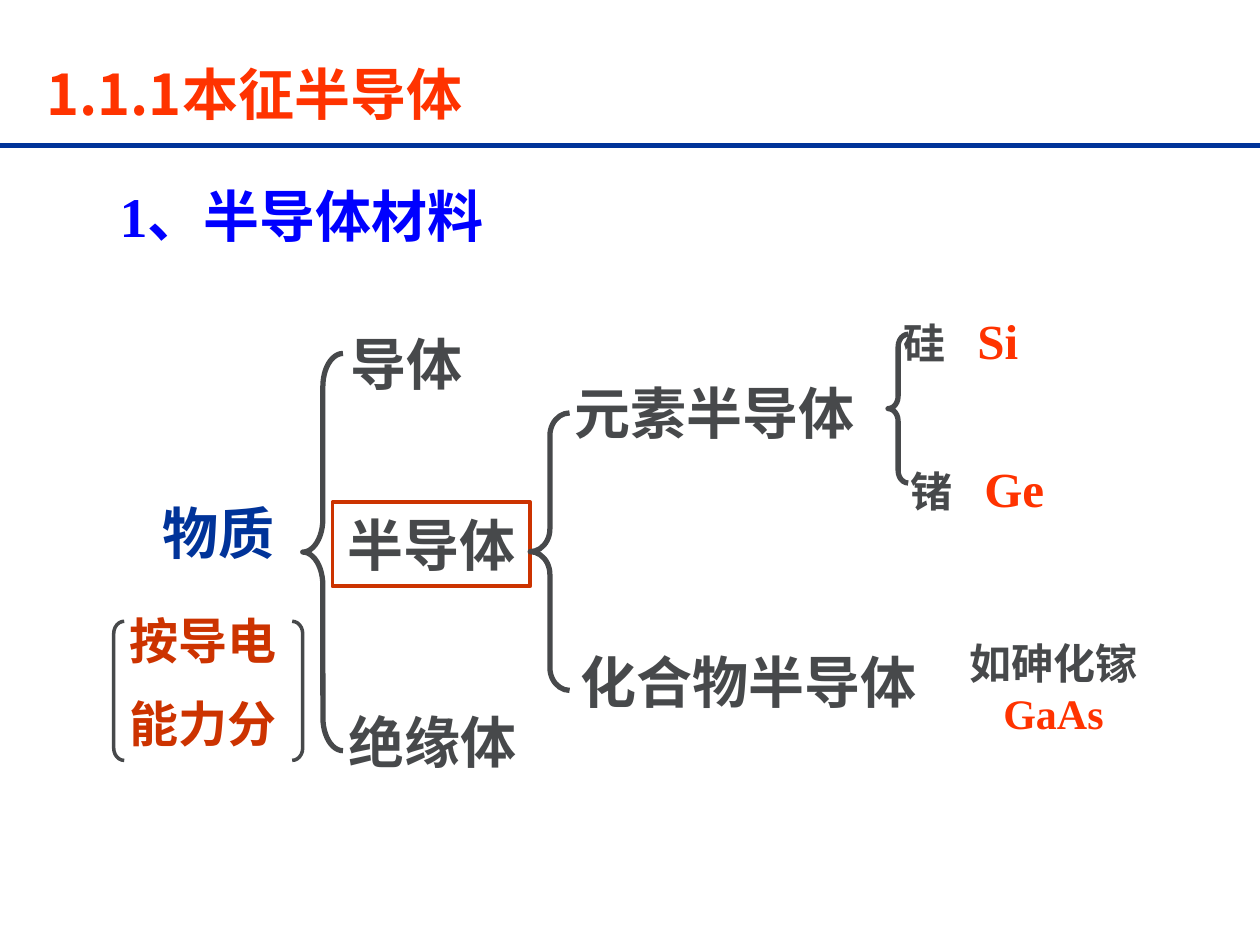
from dataclasses import dataclass

from lxml.etree import SubElement
from pptx import Presentation
from pptx.dml.color import RGBColor
from pptx.enum.shapes import MSO_CONNECTOR, MSO_SHAPE
from pptx.enum.text import MSO_ANCHOR, PP_ALIGN
from pptx.oxml.ns import qn
from pptx.util import Pt


@dataclass(frozen=True)
class Theme:
    gray: str = "47494B"
    red: str = "FF3300"
    rust: str = "CC3300"
    navy: str = "003399"
    blue: str = "0000FF"
    large: int = 32
    medium: int = 28
    small: int = 24
    serif: str = "Times New Roman"
    sans: str = "Noto Sans CJK SC"


THEME = Theme()
SLIDE_SIZE = (720, 540)
LABEL_HEIGHT = 45.5

TITLE = ("1.1.1本征半导体", (19.5, 31.5, 581, 51))
HEADINGS = [
    ("1、半导体材料", (48, 100, 249, LABEL_HEIGHT), THEME.blue),
    ("物质", (76.5, 281.5, 96.5, LABEL_HEIGHT), THEME.navy),
]
CRITERION = (["按导电", "能力分"], (59.5, 343.5, 113, 91.5))
BRACKETS = [
    (MSO_SHAPE.LEFT_BRACKET, (65, 355, 6, 79.5)),
    (MSO_SHAPE.RIGHT_BRACKET, (167, 355, 6, 79.5)),
]
FOCUS = ("半导体", (190, 287, 113, 48))
BRANCHES = [
    {
        "brace": (173, 202, 23, 227),
        "bend": 0.825,
        "labels": [
            ("导体", (190, 185, 85, LABEL_HEIGHT)),
            ("绝缘体", (190, 400.5, 114, LABEL_HEIGHT)),
        ],
    },
    {
        "brace": (303, 236, 22.5, 158.5),
        "bend": 0.58,
        "labels": [
            ("元素半导体", (320.5, 213, 176, LABEL_HEIGHT)),
            ("化合物半导体", (320.5, 366.5, 215, LABEL_HEIGHT)),
        ],
    },
]
ELEMENTS = {
    "brace": (507.5, 191, 11.5, 85),
    "bend": 0.618,
    "labels": [
        ("硅", "Si", (507.5, 173.5, 91, 41), 9),
        ("锗", "Ge", (507.5, 258.5, 102, 41), 13),
    ],
}
SYMBOL_TAB = 42
COMPOUND = ("如砷化镓", "GaAs", (518.5, 360.5, 167, 65))


def points(box):
    return [Pt(value) for value in box]


def write_text(shape, paragraphs, size=THEME.large, color=THEME.gray, font=THEME.serif,
               align=PP_ALIGN.CENTER, gap=0, tab=None, insets=(7.2, 3.6, 7.2, 3.6)):
    frame = shape.text_frame
    frame.word_wrap = True
    frame.vertical_anchor = MSO_ANCHOR.MIDDLE
    frame.margin_left, frame.margin_top, frame.margin_right, frame.margin_bottom = points(insets)
    for index, runs in enumerate(paragraphs):
        paragraph = frame.add_paragraph() if index else frame.paragraphs[0]
        paragraph.alignment = align
        if index:
            paragraph.space_before = Pt(gap)
        if tab:
            tabs = SubElement(paragraph._p.get_or_add_pPr(), qn("a:tabLst"))
            SubElement(tabs, qn("a:tab"), pos=str(Pt(tab)), algn="l")
        for content, overrides in [(runs, {})] if isinstance(runs, str) else runs:
            if content == "\v":
                paragraph.add_line_break()
                continue
            run = paragraph.add_run()
            run.text = content
            run.font.name = font
            run.font.bold = True
            run.font.size = Pt(overrides.get("size", size))
            run.font.color.rgb = RGBColor.from_string(overrides.get("color", color))


def add_label(shapes, box, paragraphs, **text_format):
    write_text(shapes.add_textbox(*points(box)), paragraphs, **text_format)


def add_outline(shapes, kind, box, color=THEME.gray, width=3, adjustments=()):
    shape = shapes.add_shape(kind, *points(box))
    shape.shadow.inherit = False
    shape.fill.background()
    shape.line.color.rgb = RGBColor.from_string(color)
    shape.line.width = Pt(width)
    for index, value in enumerate(adjustments):
        shape.adjustments[index] = value
    return shape


def add_brace_group(slide, branch):
    shapes = slide.shapes.add_group_shape().shapes
    add_outline(shapes, MSO_SHAPE.LEFT_BRACE, branch["brace"],
                adjustments=(branch["bend"], 0.5))
    return shapes


def add_headings(slide):
    text, box = TITLE
    add_label(slide.shapes, box, [text], color=THEME.red, font=THEME.sans,
              align=PP_ALIGN.LEFT, insets=(7.2, 0, 7.2, 8))
    rule = slide.shapes.add_connector(MSO_CONNECTOR.STRAIGHT,
                                      *points((0, 83, SLIDE_SIZE[0], 83)))
    rule.line.color.rgb = RGBColor.from_string(THEME.navy)
    rule.line.width = Pt(3)
    SubElement(rule._element.spPr, qn("a:effectLst"))
    for text, box, color in HEADINGS:
        add_label(slide.shapes, box, [text], color=color)


def add_classification(slide):
    criterion = slide.shapes.add_group_shape().shapes
    lines, box = CRITERION
    add_label(criterion, box, lines, size=THEME.medium, color=THEME.rust, gap=14)
    for kind, box in BRACKETS:
        add_outline(criterion, kind, box, width=2, adjustments=(1.175,))

    text, box = FOCUS
    focus = add_outline(slide.shapes, MSO_SHAPE.RECTANGLE, box, color=THEME.rust, width=2.25)
    write_text(focus, [text])

    for branch in BRANCHES:
        shapes = add_brace_group(slide, branch)
        for text, box in branch["labels"]:
            add_label(shapes, box, [text])


def add_examples(slide):
    name, formula, box = COMPOUND
    add_label(slide.shapes, box, [[(name, {}), ("\v", {}), (formula, {"color": THEME.red})]],
              size=THEME.small)
    shapes = add_brace_group(slide, ELEMENTS)
    for name, symbol, box, inset in ELEMENTS["labels"]:
        symbol_format = {"size": THEME.medium, "color": THEME.red}
        add_label(shapes, box, [[(name + "\t", {}), (symbol, symbol_format)]],
                  size=THEME.small, align=PP_ALIGN.LEFT, tab=SYMBOL_TAB,
                  insets=(inset, 3.6, 0, 3.6))


def main():
    presentation = Presentation()
    presentation.slide_width, presentation.slide_height = points(SLIDE_SIZE)
    slide = presentation.slides.add_slide(presentation.slide_layouts[6])
    add_headings(slide)
    add_classification(slide)
    add_examples(slide)
    presentation.save("out.pptx")


if __name__ == "__main__":
    main()
